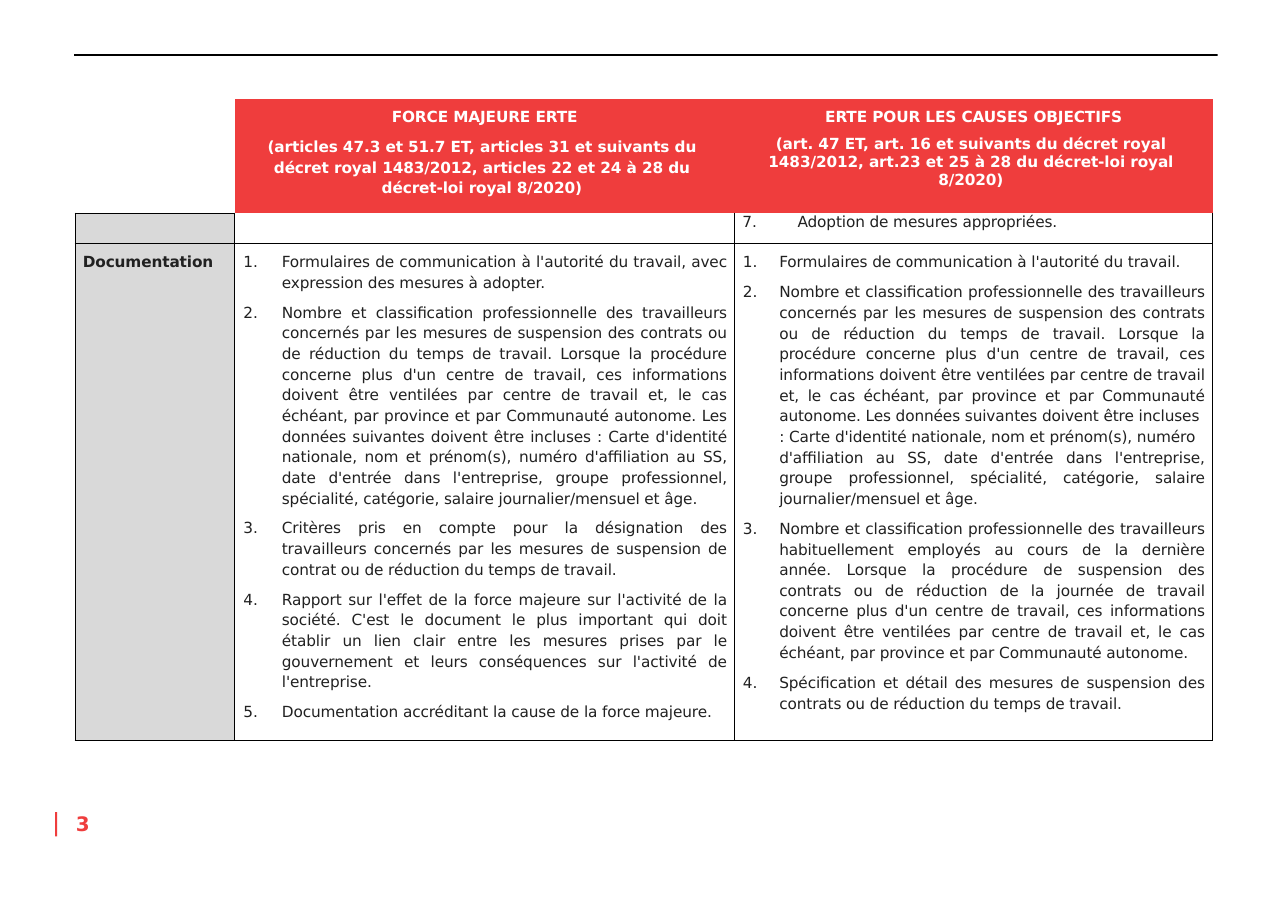
from lxml.etree import SubElement
from pptx import Presentation
from pptx.dml.color import RGBColor
from pptx.enum.shapes import MSO_SHAPE
from pptx.enum.text import PP_ALIGN
from pptx.oxml.ns import qn
from pptx.util import Cm, Pt

RED = RGBColor(0xEF, 0x3D, 0x3D)
GREY = RGBColor(0xD9, 0xD9, 0xD9)
INK = RGBColor(0x21, 0x21, 0x21)
BLACK = RGBColor(0, 0, 0)
WHITE = RGBColor(255, 255, 255)
FONT = "DejaVu Sans"

HEADS = [
    ("FORCE MAJEURE ERTE",
     "(articles 47.3 et 51.7 ET, articles 31 et suivants du décret royal 1483/2012, "
     "articles 22 et 24 à 28 du décret-loi royal 8/2020)", 1.17),
    ("ERTE POUR LES CAUSES OBJECTIFS",
     "(art. 47 ET, art. 16 et suivants du décret royal 1483/2012, art.23 et 25 à 28 "
     "du décret-loi royal 8/2020)", 1.01),
]
LAST = "7.\tAdoption de mesures appropriées."
LABEL = "Documentation"

# start number, space before, line spacing, text
FORCE = [
    (1, 4.8, 1.16, "Formulaires de communication à l'autorité du travail, avec expression "
     "des mesures à adopter."),
    (1, 6.1, 1.16, "Nombre et classification professionnelle des travailleurs concernés par "
     "les mesures de suspension des contrats ou de réduction du temps de travail. Lorsque la "
     "procédure concerne plus d'un centre de travail, ces informations doivent être ventilées "
     "par centre de travail et, le cas échéant, par province et par Communauté autonome. Les "
     "données suivantes doivent être incluses : Carte d'identité nationale, nom et prénom(s), "
     "numéro d'affiliation au SS, date d'entrée dans l'entreprise, groupe professionnel, "
     "spécialité, catégorie, salaire journalier/mensuel et âge."),
    (1, 5.9, 1.16, "Critères pris en compte pour la désignation des travailleurs concernés par "
     "les mesures de suspension de contrat ou de réduction du temps de travail."),
    (1, 6.1, 1.16, "Rapport sur l'effet de la force majeure sur l'activité de la société. "
     "C'est le document le plus important qui doit établir un lien clair entre les mesures "
     "prises par le gouvernement et leurs conséquences sur l'activité de l'entreprise."),
    (1, 8.1, 1, "Documentation accréditant la cause de la force majeure."),
]
CAUSES = [
    (1, 6.7, 1, "Formulaires de communication à l'autorité du travail."),
    (1, 6, 1.16, "Nombre et classification professionnelle des travailleurs concernés par les "
     "mesures de suspension des contrats ou de réduction du temps de travail. Lorsque la "
     "procédure concerne plus d'un centre de travail, ces informations doivent être ventilées "
     "par centre de travail et, le cas échéant, par province et par Communauté autonome. Les "
     "données suivantes doivent être incluses"),
    (0, 1.9, 1, ": Carte d'identité nationale, nom et prénom(s), numéro"),
    (0, 0.1, 1.16, "d'affiliation au SS, date d'entrée dans l'entreprise, groupe professionnel, "
     "spécialité, catégorie, salaire journalier/mensuel et âge."),
    (3, 6, 1.16, "Nombre et classification professionnelle des travailleurs habituellement "
     "employés au cours de la dernière année. Lorsque la procédure de suspension des contrats "
     "ou de réduction de la journée de travail concerne plus d'un centre de travail, ces "
     "informations doivent être ventilées par centre de travail et, le cas échéant, par "
     "province et par Communauté autonome."),
    (3, 6.2, 1.16, "Spécification et détail des mesures de suspension des contrats ou de "
     "réduction du temps de travail."),
]
COLS = [3.68, 11.53, 11.02]
ROWS = [2.62, 0.71, 11.46]
PAD = 0.18
BARS = [(1.71, 1.25, 26.37, 0.04, BLACK), (1.27, 18.72, 0.05, 0.56, RED)]


def write(para, text, color=INK, bold=False, size=10, align=PP_ALIGN.LEFT,
          left=0, right=0, hang=0, before=0, line=1, start=0, tab=0):
    para.text = text
    para.alignment = align
    para.space_before = Pt(before)
    para.line_spacing = line
    props = para._p.get_or_add_pPr()
    for key, val in (("marL", left), ("marR", right), ("indent", -hang)):
        props.set(key, str(Cm(val)))
    if start:
        SubElement(props, qn("a:buAutoNum"), type="arabicPeriod", startAt=str(start))
    else:
        SubElement(props, qn("a:buNone"))
    if tab:
        tabs = SubElement(props, qn("a:tabLst"))
        SubElement(tabs, qn("a:tab"), pos=str(Cm(tab)), algn="l")
    for run in para.runs:
        font = run.font
        font.name, font.size, font.bold = FONT, Pt(size), bold
        font.color.rgb = color
        font._element.set("spc", "-5")


def clear(frame, top=0):
    frame.margin_left = frame.margin_right = frame.margin_bottom = 0
    frame.margin_top = Cm(top)


def edge(cell, row, col):
    lines = dict.fromkeys("LRTB", BLACK if row else None)
    if row == 0:
        lines["B"] = (BLACK, None, WHITE)[col]
    elif row == 1:
        lines["T"] = (BLACK, None, WHITE)[col]
    props = cell._tc.get_or_add_tcPr()
    for side, color in lines.items():
        line = SubElement(props, qn("a:ln" + side), w=str(Pt(0.75)))
        if color is None:
            SubElement(line, qn("a:noFill"))
        else:
            fill = SubElement(line, qn("a:solidFill"))
            SubElement(fill, qn("a:srgbClr"), val=str(color))


def paint(cell, row, col):
    color = RED if row == 0 and col else GREY if row and col == 0 else None
    if color is None:
        cell.fill.background()
    else:
        cell.fill.solid()
        cell.fill.fore_color.rgb = color


def fill_head(cell, title, law, line):
    clear(cell, 0.2)
    frame = cell.text_frame
    write(frame.paragraphs[0], title, WHITE, True, align=PP_ALIGN.CENTER, before=6)
    write(frame.add_paragraph(), law, WHITE, True, align=PP_ALIGN.CENTER,
          left=0.72, right=0.85, before=6, line=line)


def fill_list(cell, items, left, hang, top):
    clear(cell, top)
    frame = cell.text_frame
    for num, (start, before, line, text) in enumerate(items):
        para = frame.add_paragraph() if num else frame.paragraphs[0]
        write(para, text, align=PP_ALIGN.JUSTIFY, left=left, right=PAD,
              hang=hang if start else 0, before=before, line=line, start=start, tab=left)


def add_grid(slide):
    frame = slide.shapes.add_table(3, 3, Cm(1.73), Cm(2.29), Cm(sum(COLS)), Cm(sum(ROWS)))
    table = frame.table
    table.first_row = table.horz_banding = False
    for col, width in zip(table.columns, COLS):
        col.width = Cm(width)
    for row, height in zip(table.rows, ROWS):
        row.height = Cm(height)
    for row in range(3):
        for col in range(3):
            cell = table.cell(row, col)
            clear(cell)
            edge(cell, row, col)
            paint(cell, row, col)
    for row, col in ((0, 0), (1, 0), (1, 1)):
        para = table.cell(row, col).text_frame.paragraphs[0]
        SubElement(para._p, qn("a:endParaRPr"), sz="1000")
    for col, head in enumerate(HEADS, 1):
        fill_head(table.cell(0, col), *head)
    write(table.cell(1, 2).text_frame.paragraphs[0], LAST, left=PAD, right=PAD,
          line=Pt(11.6), tab=1.04 - PAD)
    label = table.cell(2, 0)
    clear(label, 0.23)
    write(label.text_frame.paragraphs[0], LABEL, bold=True, left=PAD, right=PAD, before=6.7)
    fill_list(table.cell(2, 1), FORCE, 1.09, 0.89, 0.16)
    fill_list(table.cell(2, 2), CAUSES, 1.03, 0.84, 0.23)


def main():
    deck = Presentation()
    deck.slide_width, deck.slide_height = Cm(29.7), Cm(21)
    slide = deck.slides.add_slide(deck.slide_layouts[6])
    for left, top, width, height, color in BARS:
        bar = slide.shapes.add_shape(MSO_SHAPE.RECTANGLE, Cm(left), Cm(top), Cm(width), Cm(height))
        bar.shadow.inherit = False
        bar.fill.solid()
        bar.fill.fore_color.rgb = color
        bar.line.fill.background()
    add_grid(slide)
    page = slide.shapes.add_textbox(Cm(1.65), Cm(18.69), Cm(0.55), Cm(0.6)).text_frame
    clear(page, 0.03)
    page.word_wrap = True
    write(page.paragraphs[0], "3", RED, True, 13, left=0.1, before=1)
    deck.save("out.pptx")


if __name__ == "__main__":
    main()
